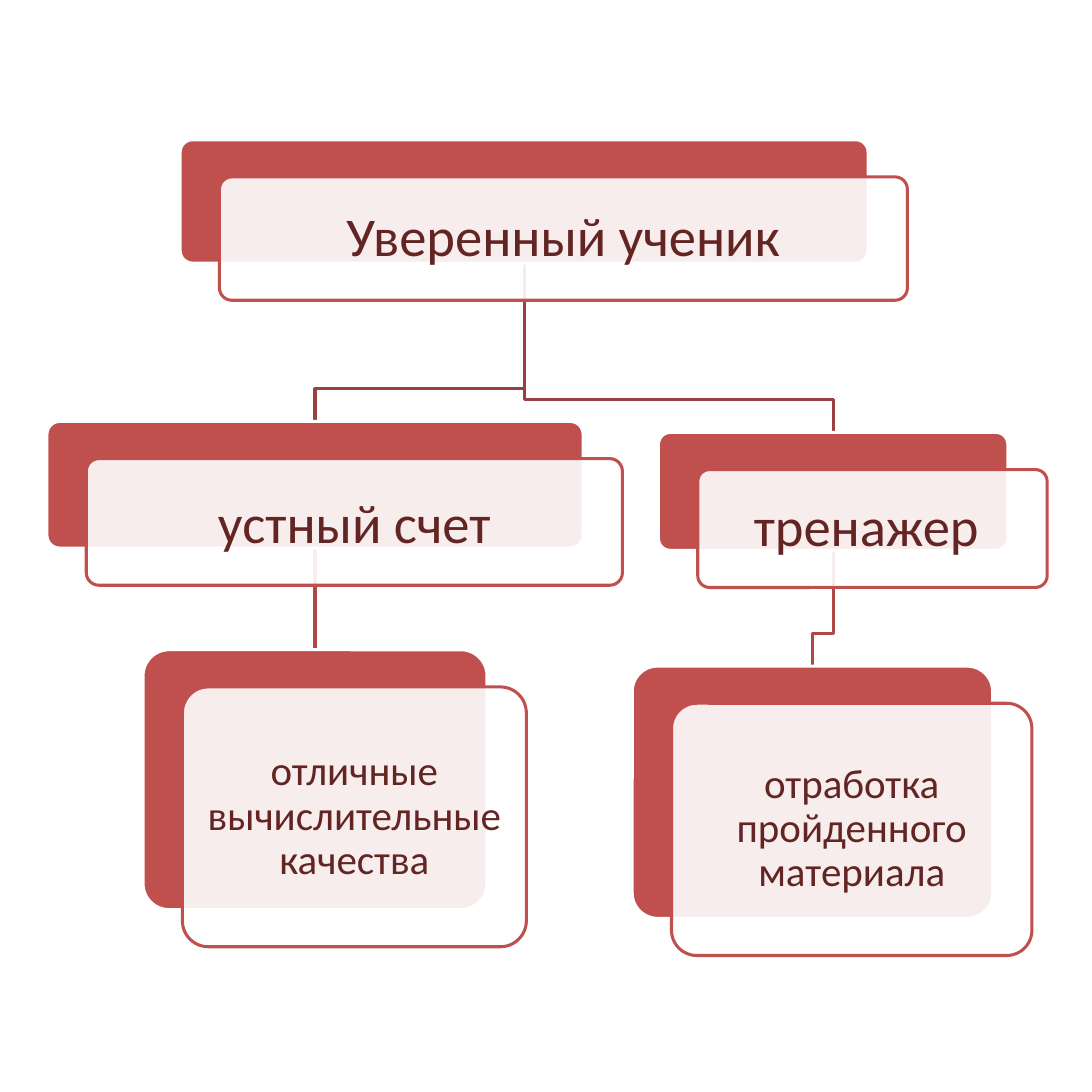
import lxml.etree
import pptx
import pptx.dml.color
import pptx.enum.shapes
import pptx.enum.text
import pptx.oxml.ns
import pptx.util

# Content: name -> text, (left, top, width, height) in px, font size, inset px, line spacing
CARDS = {
    "pupil": ("Уверенный ученик", (165, 128, 630, 113), 36, 15, 0.9),
    "counting": ("устный счет", (43, 386, 491, 116), 36, 15, 1.0),
    "skills": ("отличные вычислительные качества", (131, 595, 315, 238), 27, 11, 0.9),
    "trainer": ("тренажер ", (603, 396, 320, 108), 36, 15, 0.9),
    "practice": ("отработка пройденного материала", (579, 610, 330, 231), 27, 11, 0.9),
}
# Parent, child, line colour; from back to front
LINKS = [
    ("trainer", "practice", "AE4946"),
    ("pupil", "trainer", "9A403E"),
    ("counting", "skills", "AE4946"),
    ("pupil", "counting", "9A403E"),
]
RED, WHITE, TEXT = "C0504D", "FFFFFF", "632523"
FONT = "Calibri"
PX = 9144  # EMU per px, 100 px to the inch
SIDE = 1000
OFFSET_X, OFFSET_Y = 36, 34  # front panel against back plate
BEND = 30  # height of the elbow above a child
LINE_WIDTH = pptx.util.Pt(2)


def rgb(value):
    return pptx.dml.color.RGBColor.from_string(value)


def set_line(shape, colour):
    shape.line.color.rgb = rgb(colour)
    shape.line.width = LINE_WIDTH


def add_plate(slide, left, top, width, height, fill, line):
    plate = slide.shapes.add_shape(
        pptx.enum.shapes.MSO_SHAPE.ROUNDED_RECTANGLE,
        *(length * PX for length in (left, top, width, height)))
    plate.adjustments[0] = 0.1
    plate.shadow.inherit = False
    plate.fill.solid()
    plate.fill.fore_color.rgb = rgb(fill)
    set_line(plate, line)
    return plate


def add_card(slide, text, frame, size, inset, spacing):
    left, top, width, height = frame
    back = add_plate(slide, left, top, width, height, RED, WHITE)
    panel = add_plate(slide, left + OFFSET_X, top + OFFSET_Y, width, height, WHITE, RED)
    # Panel fill is 90 % opaque
    colour = panel.fill._xPr.find(".//" + pptx.oxml.ns.qn("a:srgbClr"))
    lxml.etree.SubElement(colour, pptx.oxml.ns.qn("a:alpha"), val="90000")

    body = panel.text_frame
    body.word_wrap = True
    body.vertical_anchor = pptx.enum.text.MSO_ANCHOR.MIDDLE
    body.margin_left = body.margin_right = inset * PX
    body.margin_top = body.margin_bottom = inset * PX
    body.text = text
    para = body.paragraphs[0]
    para.alignment = pptx.enum.text.PP_ALIGN.CENTER
    para.line_spacing = spacing
    span = para.runs[0]
    span.font.name = FONT
    span.font.size = pptx.util.Pt(size)
    span.font.color.rgb = rgb(TEXT)
    return back


def add_link(slide, parent, child, colour):
    start_x, start_y = parent.left + parent.width // 2, parent.top + parent.height
    end_x, end_y = child.left + child.width // 2, child.top
    if abs(start_x - end_x) < PX:
        link = slide.shapes.add_connector(
            pptx.enum.shapes.MSO_CONNECTOR.STRAIGHT, start_x, start_y, end_x, end_y)
        link.begin_connect(parent, 2)
        link.end_connect(child, 0)
        lxml.etree.SubElement(link._element.spPr, pptx.oxml.ns.qn("a:effectLst"))
    else:
        bend_y = end_y - BEND * PX
        outline = slide.shapes.build_freeform(start_x, start_y)
        outline.add_line_segments(
            [(start_x, bend_y), (end_x, bend_y), (end_x, end_y)], close=False)
        link = outline.convert_to_shape()
        link.fill.background()
        link.shadow.inherit = False
    set_line(link, colour)
    return link


def main():
    deck = pptx.Presentation()
    deck.slide_width = deck.slide_height = SIDE * PX
    slide = deck.slides.add_slide(deck.slide_layouts[6])

    # Cards
    plates = {name: add_card(slide, *card) for name, card in CARDS.items()}

    # Links, placed behind the cards
    first_plate = plates["pupil"]._element
    for parent, child, colour in LINKS:
        link = add_link(slide, plates[parent], plates[child], colour)
        first_plate.addprevious(link._element)

    deck.save("out.pptx")


if __name__ == "__main__":
    main()
